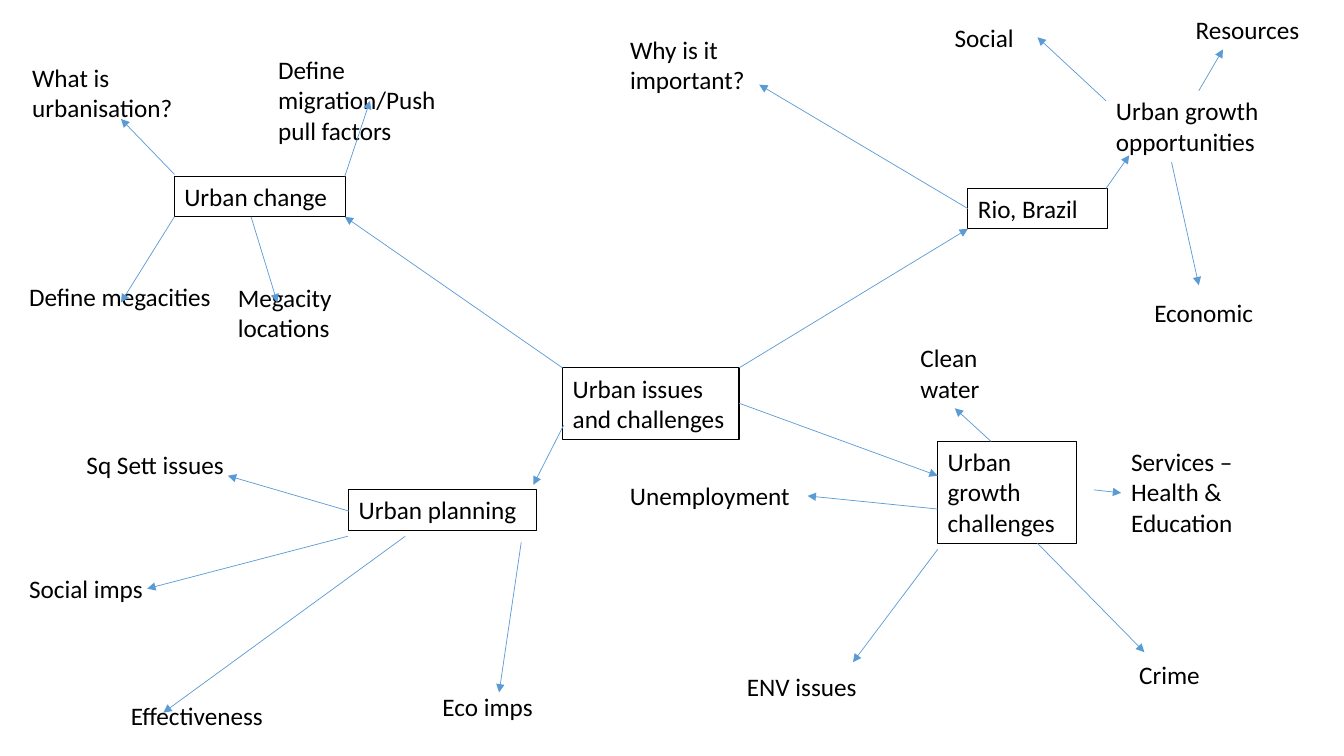
from dataclasses import dataclass

from lxml import etree
from pptx import Presentation
from pptx.dml.color import RGBColor
from pptx.enum.shapes import MSO_CONNECTOR, MSO_SHAPE
from pptx.enum.text import MSO_ANCHOR, MSO_AUTO_SIZE, PP_ALIGN
from pptx.oxml.ns import qn
from pptx.util import Pt

RECT = MSO_SHAPE.RECTANGLE
STRAIGHT = MSO_CONNECTOR.STRAIGHT
LEFT = PP_ALIGN.LEFT
TOP = MSO_ANCHOR.TOP
FIXED = MSO_AUTO_SIZE.NONE
PX = 9144  # EMU in one px, 100 px to the inch
TITLE_ONLY = 5
HIGH = {1: 40, 2: 71, 3: 101}  # box height for a number of lines


@dataclass(frozen=True)
class Theme:
    font: str = "Calibri"
    size: float = 18
    ink: RGBColor = RGBColor(0, 0, 0)
    arrow: RGBColor = RGBColor(0x5B, 0x9B, 0xD5)
    frame: float = 0.75
    thin: float = 0.5


THEME = Theme()


def emu(*sizes):
    return [size * PX for size in sizes]


def write(shape, text, size=THEME.size, color=THEME.ink, align=LEFT):
    frame = shape.text_frame
    frame.word_wrap = True
    frame.auto_size = FIXED
    frame.vertical_anchor = TOP
    frame.margin_left = frame.margin_right = Pt(7.2)
    frame.margin_top = frame.margin_bottom = Pt(3.6)
    frame.text = text
    para = frame.paragraphs[0]
    para.alignment = align
    para.line_spacing = 1.0
    para.space_before = Pt(0)
    font = para.runs[0].font
    font.name, font.size, font.color.rgb = THEME.font, Pt(size), color


def outline(shape):
    shape.fill.background()
    shape.line.color.rgb = THEME.ink
    shape.line.width = Pt(THEME.frame)


def label(slide, box, text):
    write(slide.shapes.add_textbox(*emu(*box)), text)


def arrow(slide, start, end):
    link = slide.shapes.add_connector(STRAIGHT, *emu(*start, *end))
    link.line.color.rgb = THEME.arrow
    link.line.width = Pt(THEME.thin)
    etree.SubElement(link.line._get_or_add_ln(), qn("a:tailEnd"), type="triangle")
    etree.SubElement(link._element.spPr, qn("a:effectLst"))


def shift(box, point):
    return box[0] + point[0], box[1] + point[1]


def center(slide, box, text):
    title = slide.shapes.title
    title.left, title.top, title.width, title.height = emu(*box)
    outline(title)
    write(title, text)


def topic(slide, box, text, leaves, framed=True):
    """Place a topic in its box, with leaves measured from its corner."""
    if framed:
        hub = slide.shapes.add_shape(RECT, *emu(*box))
        hub.shadow.inherit = False
        outline(hub)
        write(hub, text)
    else:
        label(slide, box, text)
    for name, spot, width, lines, start, end in leaves:
        label(slide, (*shift(box, spot), width, HIGH[lines]), name)
        arrow(slide, shift(box, start), shift(box, end))


# Leaf: text, corner, width, lines, arrow start, arrow end
CHANGE = [
    ("What is urbanisation?", (-151, -118), 203, 2, (0, -2), (-53, -57)),
    ("Define migration/Push pull factors", (93, -126), 203, 3, (169, 0), (194, -75)),
    ("Define megacities", (-154, 99), 203, 1, (0, 40), (-53, 125)),
    ("Megacity locations", (53, 100), 129, 2, (76, 40), (102, 125)),
]
RIO = [
    ("Why is it important?", (-345, -158), 138, 2, (0, 20), (-207, -103)),
]
CHANCES = [
    ("Social", (-160, -73), 92, 1, (0, 10), (-68, -53)),
    ("Resources", (79, -81), 129, 1, (92, 0), (116, -41)),
    ("Economic", (38, 200), 127, 1, (65, 71), (92, 193)),
]
GROWTH = [
    ("Clean water", (-27, -103), 138, 2, (53, 0), (17, -33)),
    ("Unemployment", (-315, 34), 186, 1, (0, 67), (-129, 54)),
    ("Services – Health & Education", (182, 0), 138, 3, (155, 48), (182, 51)),
    ("Crime", (190, 211), 138, 1, (99, 101), (205, 209)),
    ("ENV issues", (-199, 223), 186, 1, (0, 107), (-84, 219)),
]
PLANS = [
    ("Sq Sett issues", (-270, -45), 186, 1, (0, 21), (-120, -14)),
    ("Social imps", (-327, 78), 186, 1, (-1, 46), (-200, 98)),
    ("Effectiveness", (-226, 204), 186, 1, (56, 46), (-184, 221)),
    ("Eco imps", (83, 195), 186, 1, (171, 52), (149, 201)),
]

CORE = (558, 365, 175, HIGH[2])
# Topic: text, box, leaves, arrow start on the core, arrow end on the topic
TOPICS = [
    ("Urban change", (173, 175, 170, HIGH[1]), CHANGE, (0, 0), (169, 40)),
    ("Rio, Brazil", (960, 187, 138, HIGH[1]), RIO, (175, 0), (0, 40)),
    ("Urban growth challenges", (930, 438, 138, HIGH[3]), GROWTH, (175, 35), (0, 34)),
    ("Urban planning", (346, 486, 186, HIGH[1]), PLANS, (1, 57), (183, -5)),
]


def main():
    deck = Presentation()
    deck.slide_width, deck.slide_height = emu(1333, 750)
    slide = deck.slides.add_slide(deck.slide_layouts[TITLE_ONLY])

    # Core and its four topics
    center(slide, CORE, "Urban issues and challenges")
    for text, box, leaves, start, end in TOPICS:
        topic(slide, box, text, leaves)
        arrow(slide, shift(CORE, start), shift(box, end))

    # Opportunities branch off Rio
    topic(slide, (1097, 90, 182, HIGH[2]), "Urban growth opportunities", CHANCES, framed=False)
    arrow(slide, (1097, 187), (1120, 154))

    deck.save("out.pptx")


if __name__ == "__main__":
    main()
